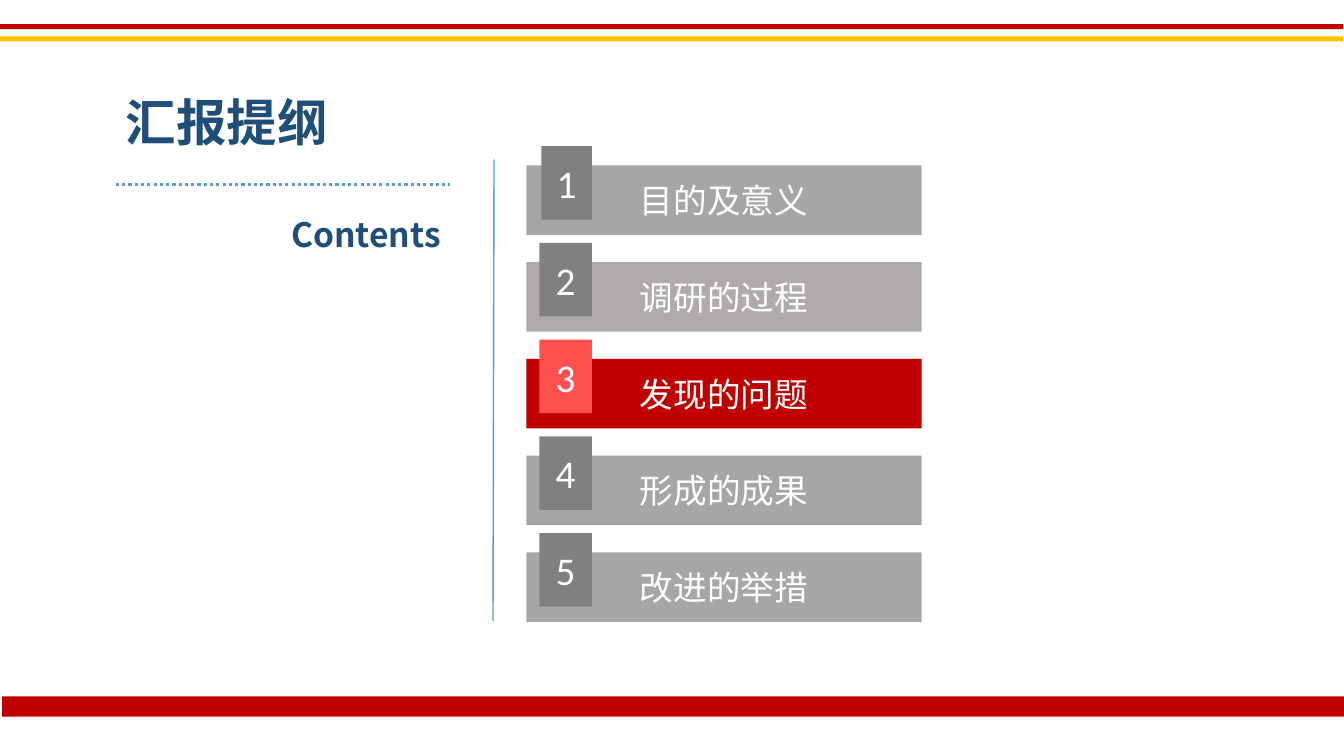
from lxml.etree import SubElement
from pptx import Presentation
from pptx.dml.color import RGBColor
from pptx.enum.dml import MSO_LINE
from pptx.enum.shapes import MSO_CONNECTOR, MSO_SHAPE
from pptx.enum.text import MSO_ANCHOR as ANCHOR, MSO_AUTO_SIZE, PP_ALIGN as ALIGN
from pptx.oxml.ns import qn
from pptx.util import Inches, Pt

COLORS = {
    "red": "C00000", "coral": "FF5050", "gold": "FFC000", "navy": "1F4E79",
    "blue": "5B9BD5", "gray": "A6A6A6", "warm": "AFABAB", "dark": "808080",
    "white": "FFFFFF",
}
CJK = "Noto Sans CJK SC"
LATIN = "Calibri"
SECTIONS = [
    ("目的及意义", "gray", "dark", 0.15),
    ("调研的过程", "warm", "dark", 0.13),
    ("发现的问题", "red", "coral", 0.13),
    ("形成的成果", "gray", "dark", 0.13),
    ("改进的举措", "gray", "dark", 0.13),
]


def rgb(name):
    """Return the named colour."""
    return RGBColor.from_string(COLORS[name])


def write(tf, text, size, font, color, align, bold=False):
    """Write one styled paragraph into a text frame."""
    tf.word_wrap = True
    p = tf.paragraphs[0]
    p.text = text
    p.alignment = align
    p.font.size = Pt(size)
    p.font.bold = bold
    p.font.color.rgb = rgb(color)
    p.font.name = font
    SubElement(p._p.pPr.find(qn("a:defRPr")), qn("a:ea"), typeface=font)


def add_rect(s, x, y, w, h, fill):
    """Add a plain filled rectangle."""
    sp = s.shapes.add_shape(MSO_SHAPE.RECTANGLE, Inches(x), Inches(y), Inches(w), Inches(h))
    sp.shadow.inherit = False
    sp.fill.solid()
    sp.fill.fore_color.rgb = rgb(fill)
    sp.line.fill.background()
    return sp


def add_block(s, x, y, w, h, fill, text, size, font):
    """Add a rectangle with centred white text."""
    tf = add_rect(s, x, y, w, h, fill).text_frame
    tf.vertical_anchor = ANCHOR.MIDDLE
    write(tf, text, size, font, "white", ALIGN.CENTER)


def add_label(s, x, y, w, h, text, size, align):
    """Add a bold navy heading."""
    tf = s.shapes.add_textbox(Inches(x), Inches(y), Inches(w), Inches(h)).text_frame
    tf.auto_size = MSO_AUTO_SIZE.SHAPE_TO_FIT_TEXT
    write(tf, text, size, CJK, "navy", align, bold=True)


def add_line(s, x1, y1, x2, y2, width):
    """Add a blue line without shadow."""
    line = s.shapes.add_connector(
        MSO_CONNECTOR.STRAIGHT, Inches(x1), Inches(y1), Inches(x2), Inches(y2))
    line.line.color.rgb = rgb("blue")
    line.line.width = Pt(width)
    SubElement(line._element.spPr, qn("a:effectLst"))
    return line


def add_heading(s, x, y, w):
    """Place the title, dotted rule and subtitle."""
    rule = add_line(s, x, y + 0.98, x + w, y + 0.98, 2.25)
    rule.line.dash_style = MSO_LINE.ROUND_DOT
    add_label(s, x, y, 2.82, 0.71, "汇报提纲", 36, ALIGN.LEFT)
    add_label(s, x + 0.5, y + 1.22, 2.82, 0.51, "Contents", 24, ALIGN.RIGHT)


def add_agenda(s, x, y, w, pitch):
    """Place the divider and the numbered section bars."""
    add_line(s, x - 0.32, y - 0.06, x - 0.33, y + 4.52, 1)
    for i, (title, fill, badge, inset) in enumerate(SECTIONS):
        top = y + i * pitch
        add_block(s, x, top, w, 0.69, fill, title, 24, CJK)
        add_block(s, x + inset, top - 0.19, 0.65 - inset, 0.73, badge, str(i + 1), 28, LATIN)


def add_bands(s, w):
    """Place the coloured bands at the top and bottom."""
    add_rect(s, 0.02, 6.91, w, 0.2, "red")
    add_rect(s, 0, 0.36, w, 0.05, "gold")
    add_rect(s, 0, 0.24, w, 0.05, "red")


def main():
    """Build and save the contents slide."""
    prs = Presentation()
    prs.slide_width, prs.slide_height = Inches(13.33), Inches(7.5)
    s = prs.slides.add_slide(prs.slide_layouts[6])
    add_heading(s, 1.15, 0.85, 3.31)
    add_agenda(s, 5.22, 1.64, 3.92, 0.96)
    add_bands(s, 13.32)
    prs.save("out.pptx")


if __name__ == "__main__":
    main()
